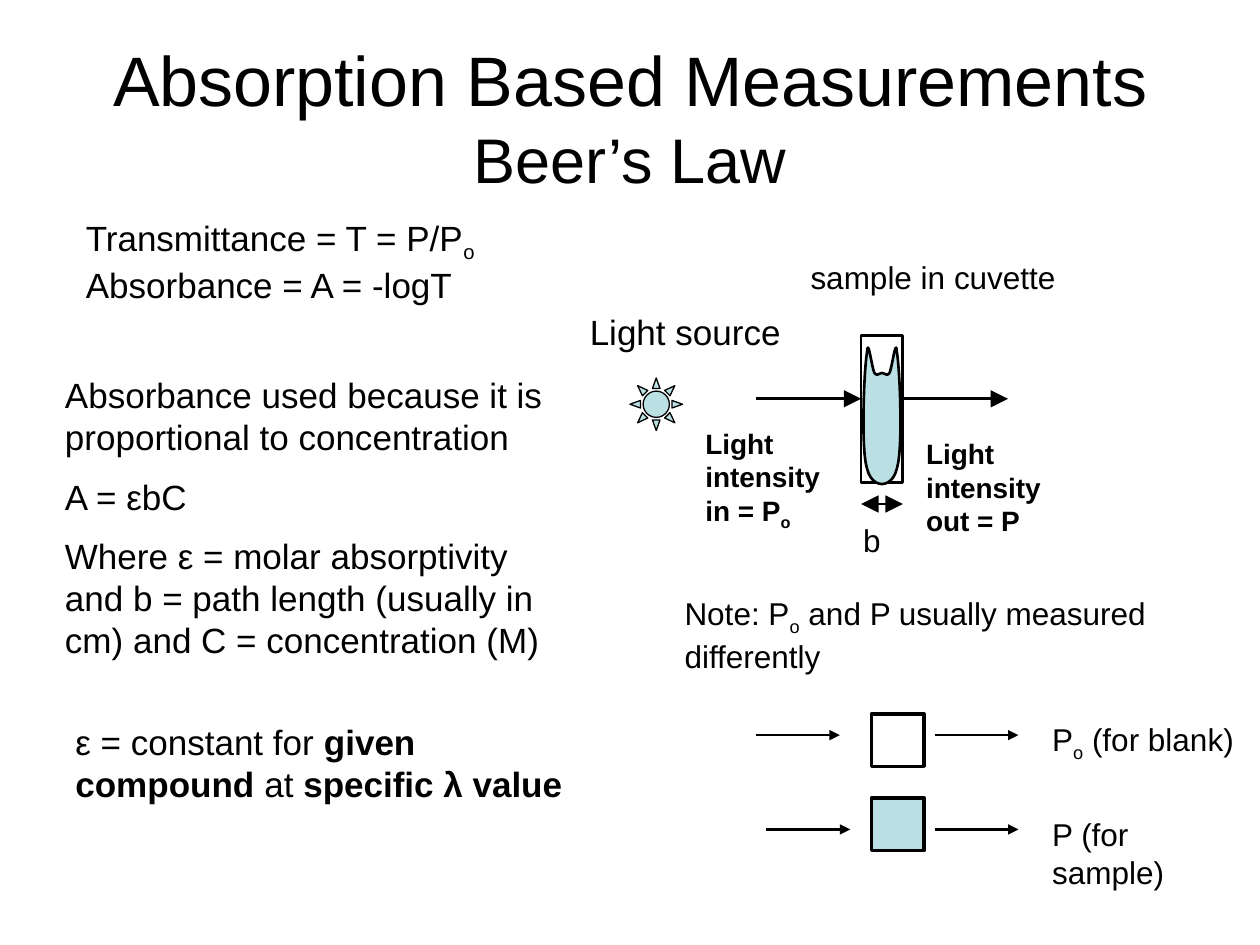
from dataclasses import dataclass

from lxml import etree
from pptx import Presentation
from pptx.dml.color import RGBColor
from pptx.enum.shapes import MSO_CONNECTOR, MSO_SHAPE
from pptx.enum.text import MSO_ANCHOR, MSO_AUTO_SIZE, PP_ALIGN
from pptx.oxml.ns import qn
from pptx.util import Cm, Pt

STRAIGHT = MSO_CONNECTOR.STRAIGHT
RECTANGLE = MSO_SHAPE.RECTANGLE
SUN = MSO_SHAPE.SUN
MIDDLE = MSO_ANCHOR.MIDDLE
FIT_SHAPE = MSO_AUTO_SIZE.SHAPE_TO_FIT_TEXT
FIT_NONE = MSO_AUTO_SIZE.NONE
CENTER = PP_ALIGN.CENTER
LEFT = PP_ALIGN.LEFT


@dataclass(frozen=True)
class Theme:
    font: str = "Arial"
    ink: RGBColor = RGBColor(0, 0, 0)
    paper: RGBColor = RGBColor(255, 255, 255)
    liquid: RGBColor = RGBColor(0xBB, 0xE0, 0xE3)
    title: int = 40
    subtitle: int = 36
    body: int = 20
    label: int = 18
    small: int = 16


THEME = Theme()
BOLD = {"bold": True}
SUB = {"baseline": "-25000"}
BOLD_SUB = {**BOLD, **SUB}

# Centimetres: start point, then cubic curves as (control, control, end).
LIQUID_START = (17.48, 7.09)
LIQUID_CURVES = [
    ((17.5, 6.78), (17.58, 7.44), (17.63, 7.52)),
    ((17.68, 7.59), (17.73, 7.52), (17.78, 7.52)),
    ((17.83, 7.52), (17.88, 7.59), (17.93, 7.52)),
    ((17.98, 7.44), (18.06, 6.78), (18.08, 7.09)),
    ((18.14, 7.42), (18.21, 9.07), (18.08, 9.45)),
    ((17.98, 9.86), (17.58, 9.86), (17.48, 9.45)),
    ((17.35, 9.07), (17.42, 7.42), LIQUID_START),
]


def add_span(para, text, size, bold=False, baseline=None):
    span = para.add_run()
    span.text = text
    values = {"name": THEME.font, "size": Pt(size), "bold": bold}
    for name, value in values.items():
        setattr(span.font, name, value)
    span.font.color.rgb = THEME.ink
    if baseline:
        span._r.get_or_add_rPr().set("baseline", baseline)


def add_box(slide, place, auto_size=FIT_SHAPE):
    box = slide.shapes.add_textbox(*map(Cm, place))
    frame = box.text_frame
    for name, value in {"word_wrap": True, "auto_size": auto_size}.items():
        setattr(frame, name, value)
    return frame


def add_title(slide, place, first, second):
    frame = add_box(slide, place, FIT_NONE)
    frame.vertical_anchor = MIDDLE
    para = frame.paragraphs[0]
    para.alignment = CENTER
    add_span(para, first, THEME.title)
    para.add_line_break()
    add_span(para, second, THEME.subtitle)


def add_text(slide, place, size, *lines, gap=0):
    """Each line is a list of (text, style) spans; gap is the space between lines."""
    frame = add_box(slide, place)
    for index, spans in enumerate(lines):
        para = frame.add_paragraph() if index else frame.paragraphs[0]
        para.alignment = LEFT
        para.space_before = Pt(gap if index else 0)
        for text, style in spans:
            add_span(para, text, size, **style)


def paint(shape, fill, width):
    shape.shadow.inherit = False
    if fill is None:
        shape.fill.background()
    else:
        shape.fill.solid()
        shape.fill.fore_color.rgb = fill
    shape.line.color.rgb = THEME.ink
    shape.line.width = Pt(width)


def add_preset(slide, kind, place, fill, width):
    shape = slide.shapes.add_shape(kind, *map(Cm, place))
    paint(shape, fill, width)
    return shape


def curve_points(start, curves, steps=12):
    """Yield points along a chain of cubic Bezier curves."""
    for first, second, end in curves:
        for step in range(1, steps + 1):
            t = step / steps
            u = 1 - t
            yield tuple(
                u**3 * a + 3 * u * u * t * b + 3 * u * t * t * c + t**3 * d
                for a, b, c, d in zip(start, first, second, end)
            )
        start = end


def add_liquid(slide):
    builder = slide.shapes.build_freeform(*map(Cm, LIQUID_START))
    points = [(Cm(x), Cm(y)) for x, y in curve_points(LIQUID_START, LIQUID_CURVES)]
    builder.add_line_segments(points, close=True)
    paint(builder.convert_to_shape(), THEME.liquid, 1.5)


def add_arrow(slide, left, right, y, head="med", both=False):
    arrow = slide.shapes.add_connector(STRAIGHT, Cm(left), Cm(y), Cm(right), Cm(y))
    arrow.line.color.rgb = THEME.ink
    arrow.line.width = Pt(1.5)
    outline = arrow.line._get_or_add_ln()
    for tag in ("a:headEnd", "a:tailEnd") if both else ("a:tailEnd",):
        etree.SubElement(outline, qn(tag), type="triangle", w=head, len=head)
    etree.SubElement(arrow._element.spPr, qn("a:effectLst"))


def add_equations(slide):
    add_text(slide, (1.48, 4.23, 10.58, 3.23), THEME.body,
             [("Transmittance = T = P/P", {}), ("o", SUB)],
             [("Absorbance = A = -logT", {})])
    add_text(slide, (1.06, 7.41, 10.37, 6.17), THEME.body,
             [("Absorbance used because it is proportional to concentration", {})],
             [("A = εbC", {})],
             [("Where ε = molar absorptivity and b = path length (usually in cm) "
               "and C = concentration (M)", {})],
             gap=THEME.body / 2)
    add_text(slide, (1.27, 14.39, 10.58, 1.96), THEME.body,
             [("ε = constant for ", {}), ("given compound", BOLD),
              (" at ", {}), ("specific λ value", BOLD)])


def add_cuvette_diagram(slide):
    left, right, beam = 17.36, 18.2, 8.04
    add_arrow(slide, 15.24, left, beam, "lg")
    add_preset(slide, RECTANGLE, (left, 6.77, right - left, 2.96), None, 1.5)
    add_liquid(slide)
    add_arrow(slide, right, 20.32, beam, "lg")
    add_arrow(slide, left, right, 10.16, "lg", both=True)
    sun = add_preset(slide, SUN, (12.7, 7.62, 1.06, 1.06), THEME.liquid, 0.75)
    sun.adjustments[0] = 0.25
    add_text(slide, (13.97, 8.47, 2.96, 2.29), THEME.small,
             [("Light intensity in = P", BOLD), ("o", BOLD_SUB)])
    add_text(slide, (18.42, 8.68, 2.96, 2.29), THEME.small,
             [("Light intensity out = P", BOLD)])
    add_text(slide, (11.64, 6.14, 5.08, 1.09), THEME.body, [("Light source", {})])
    add_text(slide, (17.15, 10.37, 1.27, 1.02), THEME.label, [("b", {})])
    add_text(slide, (16.09, 5.08, 6.14, 1.02), THEME.label, [("sample in cuvette", {})])


def add_measurement(slide, square_top, fill, arrow_left, arrow_y, label_top, spans):
    length = 1.69
    add_preset(slide, RECTANGLE, (17.57, square_top, 1.06, 1.06), fill, 2)
    for left in (arrow_left, 18.84):
        add_arrow(slide, left, left + length, arrow_y)
    add_text(slide, (20.96, label_top, 4.45, 1.02), THEME.label, spans)


def main():
    deck = Presentation()
    deck.slide_width, deck.slide_height = Cm(25.4), Cm(19.05)
    slide = deck.slides.add_slide(deck.slide_layouts[6])
    add_title(slide, (1.27, 0.76, 22.86, 3.18),
              "Absorption Based Measurements", "Beer’s Law")
    add_equations(slide)
    add_cuvette_diagram(slide)
    add_text(slide, (13.55, 11.85, 11.22, 1.8), THEME.label,
             [("Note: P", {}), ("o", SUB), (" and P usually measured differently", {})])
    add_measurement(slide, 14.39, THEME.paper, 15.24, 14.82, 14.39,
                    [("P", {}), ("o", SUB), (" (for blank)", {})])
    add_measurement(slide, 16.09, THEME.liquid, 15.45, 16.72, 16.3,
                    [("P (for sample)", {})])
    deck.save("out.pptx")


if __name__ == "__main__":
    main()
